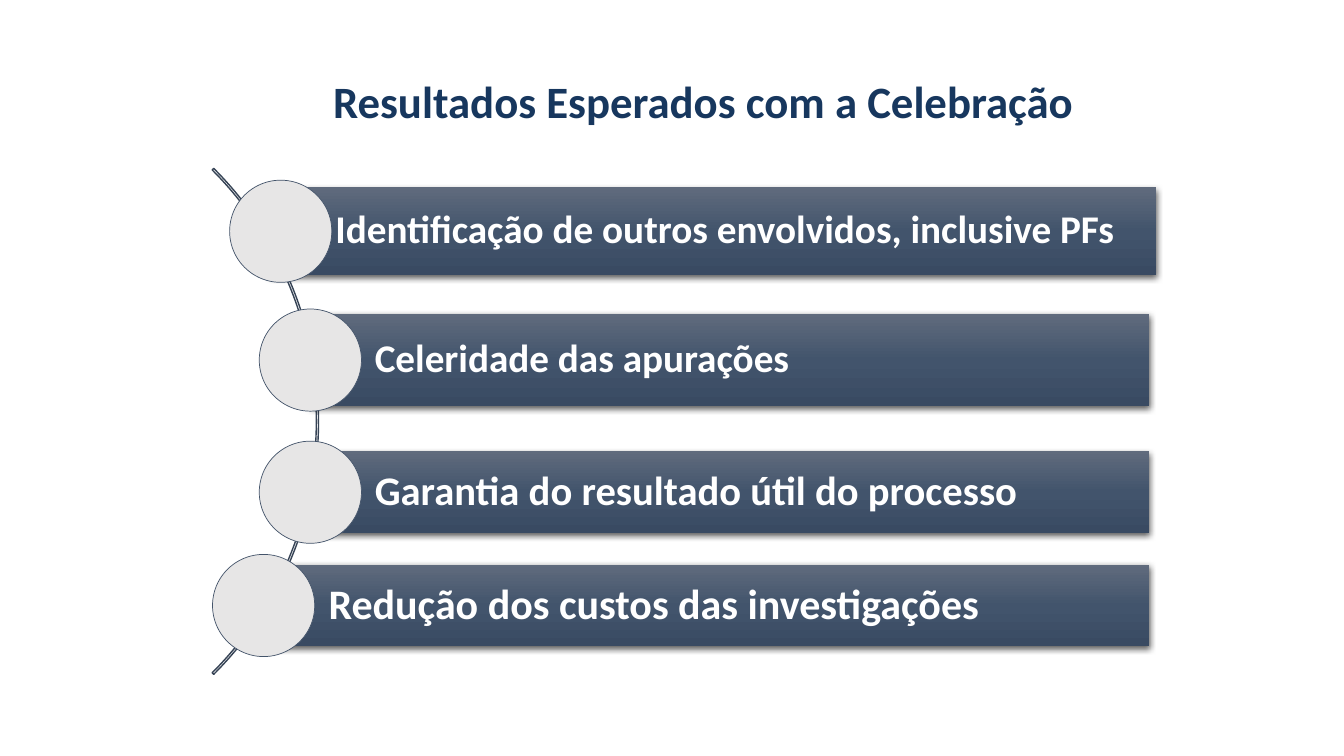
from copy import deepcopy
from dataclasses import dataclass

from lxml.etree import SubElement
from pptx import Presentation
from pptx.dml.color import RGBColor
from pptx.enum.shapes import MSO_SHAPE
from pptx.enum.text import MSO_ANCHOR, PP_ALIGN
from pptx.oxml.ns import qn
from pptx.util import Pt


@dataclass(frozen=True)
class Theme:
    """Colours and type sizes of the slide."""
    font: str = "Calibri"
    title: str = "17375E"
    bar_text: str = "FFFFFF"
    bar_stops: tuple = ((0, "606B7D"), (0.5, "42546C"), (1, "394A62"))
    shadow: str = "000000"
    arc: str = "364355"
    disc: str = "E7E6E6"
    disc_edge: str = "44546A"
    title_size: int = 32
    bar_sizes: tuple = (28, 28, 29, 30)


class ResultsSlide:
    """Draws the elements of the results list on one slide."""

    def __init__(self, slide, theme):
        """Keep the slide and its theme."""
        self.slide = slide
        self.theme = theme

    def shape(self, preset, left, top, width, height):
        """Add a preset shape without a shadow."""
        shape = self.slide.shapes.add_shape(preset, Pt(left), Pt(top), Pt(width), Pt(height))
        shape.shadow.inherit = False
        return shape

    def label(self, frame, wording, size, colour, align):
        """Set one bold, vertically centred paragraph."""
        frame.word_wrap = True
        frame.vertical_anchor = MSO_ANCHOR.MIDDLE
        paragraph = frame.paragraphs[0]
        paragraph.text = wording
        paragraph.alignment = align
        font = paragraph.font
        font.name, font.size, font.bold = self.theme.font, Pt(size), True
        font.color.rgb = RGBColor.from_string(colour)
        return paragraph

    def outline(self, shape, colour, weight):
        """Give a shape a solid outline."""
        shape.line.color.rgb = RGBColor.from_string(colour)
        shape.line.width = Pt(weight)

    def title(self, wording, left, top, width, height):
        """Add the centred heading."""
        heading = self.slide.shapes.add_textbox(Pt(left), Pt(top), Pt(width), Pt(height))
        self.label(heading.text_frame, wording, self.theme.title_size,
                   self.theme.title, PP_ALIGN.CENTER)

    def arc(self, left, top, diameter):
        """Add the thin arc that links the discs."""
        arc = self.shape(MSO_SHAPE.BLOCK_ARC, left, top, diameter, diameter)
        for index, value in enumerate((189, 27, 0.003)):
            arc.adjustments[index] = value
        arc.fill.background()
        self.outline(arc, self.theme.arc, 1)

    def shade(self, bar):
        """Fill a bar with the vertical gradient and add its shadow."""
        bar.fill.gradient()
        bar.fill.gradient_angle = 270
        properties = bar._element.spPr
        stop_list = properties.find(".//" + qn("a:gsLst"))
        stop_list.append(deepcopy(stop_list[0]))
        for stop, (position, colour) in zip(bar.fill.gradient_stops, self.theme.bar_stops):
            stop.position = position
            stop.color.rgb = RGBColor.from_string(colour)
        shadow = SubElement(properties.find(qn("a:effectLst")), qn("a:outerShdw"),
                            blurRad=str(Pt(4.5)), dist=str(Pt(1.5)),
                            dir="5400000", algn="ctr", rotWithShape="0")
        tone = SubElement(shadow, qn("a:srgbClr"), val=self.theme.shadow)
        SubElement(tone, qn("a:alpha"), val="63000")

    def bar(self, wording, size, left, middle, width, height):
        """Add a shaded bar with its result."""
        bar = self.shape(MSO_SHAPE.RECTANGLE, left, middle - height / 2, width, height)
        self.shade(bar)
        bar.line.fill.background()
        frame = bar.text_frame
        frame.margin_left = Pt(46)
        frame.margin_top = frame.margin_right = frame.margin_bottom = Pt(5.6)
        paragraph = self.label(frame, wording, size, self.theme.bar_text, PP_ALIGN.LEFT)
        paragraph.line_spacing = 0.9

    def disc(self, centre, middle, diameter=73):
        """Add a disc around a point on the arc."""
        disc = self.shape(MSO_SHAPE.OVAL, centre - diameter / 2, middle - diameter / 2,
                          diameter, diameter)
        disc.fill.solid()
        disc.fill.fore_color.rgb = RGBColor.from_string(self.theme.disc)
        self.outline(disc, self.theme.disc_edge, 0.5)


def main():
    """Build and save the slide."""
    deck = Presentation()
    deck.slide_width, deck.slide_height = Pt(960), Pt(540)
    theme = Theme()
    page = ResultsSlide(deck.slides.add_slide(deck.slide_layouts[6]), theme)
    page.title("Resultados Esperados com a Celebração", 202, 49, 601, 45.4)
    page.arc(-283.5, 45.5, 511)
    results = (
        ("Identificação de outros envolvidos, inclusive PFs", 200.5, 193.6, 165.2, 632, 62.8),
        ("Celeridade das apurações", 221.7, 221.7, 257.2, 599, 65.5),
        ("Garantia do resultado útil do processo", 221.7, 221.7, 351.6, 599, 58.5),
        ("Redução dos custos das investigações", 188.3, 188.7, 432.5, 632, 58.5),
    )
    for (wording, centre, left, middle, width, height), size in zip(results, theme.bar_sizes):
        page.bar(wording, size, left, middle, width, height)
        page.disc(centre, middle)
    deck.save("out.pptx")


if __name__ == "__main__":
    main()
